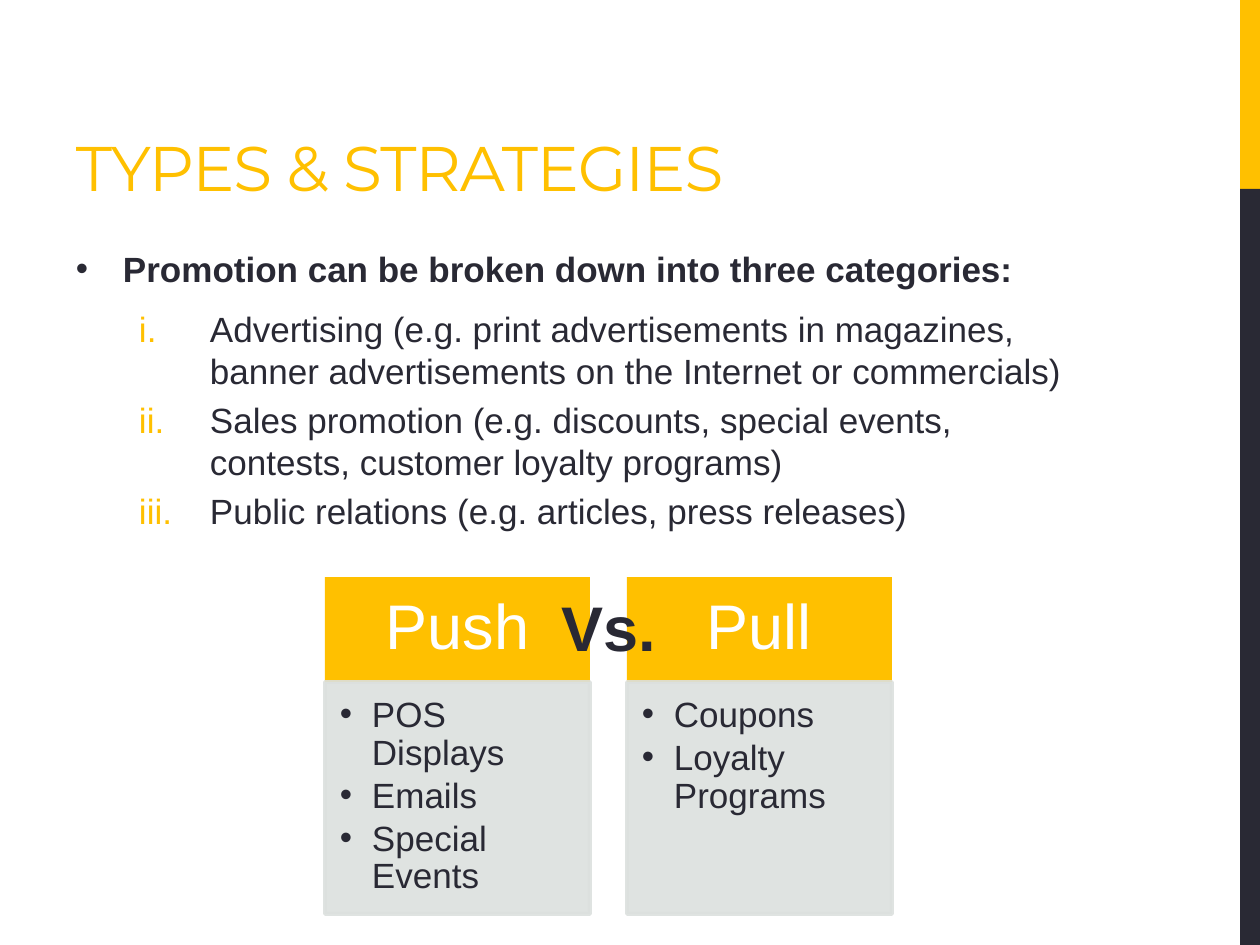
from lxml import etree
from pptx import Presentation
from pptx import util as u
from pptx.dml.color import RGBColor
from pptx.enum import shapes, text
from pptx.oxml.ns import qn

SCALE = u.Inches(1) / 126
GOLD = RGBColor(0xFF, 0xC0, 0x00)
DARK = RGBColor(0x29, 0x29, 0x34)
GREY = RGBColor(0xDC, 0xE0, 0xDE)
WHITE = RGBColor(0xFF, 0xFF, 0xFF)

presentation = Presentation()
presentation.slide_width = round(1260 * SCALE)
presentation.slide_height = round(945 * SCALE)
slide = presentation.slides.add_slide(presentation.slide_layouts[6])


def add_box(box, fill=None, insets=(13, 6, 13, 6), anchor=text.MSO_ANCHOR.TOP):
    """Add a filled rectangle, or a text box when there is no fill."""
    place = [round(value * SCALE) for value in box]
    if fill is None:
        shape = slide.shapes.add_textbox(*place)
    else:
        shape = slide.shapes.add_shape(shapes.MSO_SHAPE.RECTANGLE, *place)
        shape.shadow.inherit = False
        shape.fill.solid()
        shape.fill.fore_color.rgb = fill
        shape.line.fill.background()
    frame = shape.text_frame
    frame.word_wrap = True
    frame.vertical_anchor = anchor
    for side, inset in zip(("left", "top", "right", "bottom"), insets):
        setattr(frame, f"margin_{side}", round(inset * SCALE))
    return shape


def add_text(shape, words, color, size=20, bullet=None, bullet_color=None,
             indent=(0, 0), spacing=None, first=True, **font_format):
    """Write one paragraph into a shape; indent is (left, first line)."""
    frame = shape.text_frame
    paragraph = frame.paragraphs[0] if first else frame.add_paragraph()
    properties = paragraph._p.get_or_add_pPr()
    if bullet:
        properties.set("marL", str(round(indent[0] * SCALE)))
        properties.set("indent", str(round(indent[1] * SCALE)))
        if bullet_color:
            holder = etree.SubElement(properties, qn("a:buClr"))
            etree.SubElement(holder, qn("a:srgbClr"), val=str(bullet_color))
        etree.SubElement(properties, qn("a:buFont"), typeface="Arial")
        if bullet == "•":
            etree.SubElement(properties, qn("a:buChar"), char=bullet)
        else:
            etree.SubElement(properties, qn("a:buAutoNum"), type=bullet)
    paragraph_format = {"alignment": text.PP_ALIGN.LEFT, **(spacing or {})}
    for name, value in paragraph_format.items():
        setattr(paragraph, name, value)
    run = paragraph.add_run()
    run.text = words
    run.font.color.rgb = color
    for name, value in {"name": "Arial", "size": u.Pt(size), **font_format}.items():
        setattr(run.font, name, value)
    return run


# Side bar
add_box((1240, 0, 20, 189), GOLD)
add_box((1240, 189, 20, 756), DARK)

# Title
title = add_box((63, 21, 798, 189), anchor=text.MSO_ANCHOR.BOTTOM)
title_run = add_text(title, "TYPES & STRATEGIES", GOLD, 36, name="Montserrat")
title_run.font._element.set("spc", "-60")

# Promotion categories
body = add_box((63, 242, 1050, 602))
add_text(body, "Promotion can be broken down into three categories:", DARK,
         bullet="•", indent=(47, -47), spacing={"space_after": u.Pt(6)}, bold=True)
categories = (
    "Advertising (e.g. print advertisements in magazines, "
    "banner advertisements on the Internet or commercials)",
    "Sales promotion (e.g. discounts, special events, "
    "contests, customer loyalty programs)",
    "Public relations (e.g. articles, press releases)",
)
for category in categories:
    add_text(body, category, DARK, bullet="romanLcPeriod", bullet_color=GOLD,
             indent=(134, -71), spacing={"space_before": u.Pt(4)}, first=False)

# Push and pull columns
columns = (
    ("Push", ("POS Displays", "Emails", "Special Events")),
    ("Pull", ("Coupons", "Loyalty Programs")),
)
for column, (heading, examples) in enumerate(columns):
    left = 325 + 302 * column
    header = add_box((left, 577, 265, 105), GOLD, (35, 20, 35, 20),
                     text.MSO_ANCHOR.MIDDLE)
    add_text(header, heading, WHITE, 36,
             spacing={"alignment": text.PP_ALIGN.CENTER, "line_spacing": 0.9})

    panel = add_box((left, 682, 265, 232), GREY, (15, 15, 20, 21))
    panel.line.color.rgb = GREY
    panel.line.width = u.Pt(2.25)
    for color in panel._element.spPr.iter(qn("a:srgbClr")):
        etree.SubElement(color, qn("a:alpha"), val="90000")
    for number, example in enumerate(examples):
        add_text(panel, example, DARK, bullet="•", indent=(32, -32),
                 spacing={"line_spacing": 0.9, "space_after": u.Pt(3)},
                 first=number == 0)

# Versus label
versus = add_box((546, 583, 126, 89))
add_text(versus, "Vs.", DARK, 36, bold=True,
         spacing={"alignment": text.PP_ALIGN.CENTER})

presentation.save("out.pptx")
